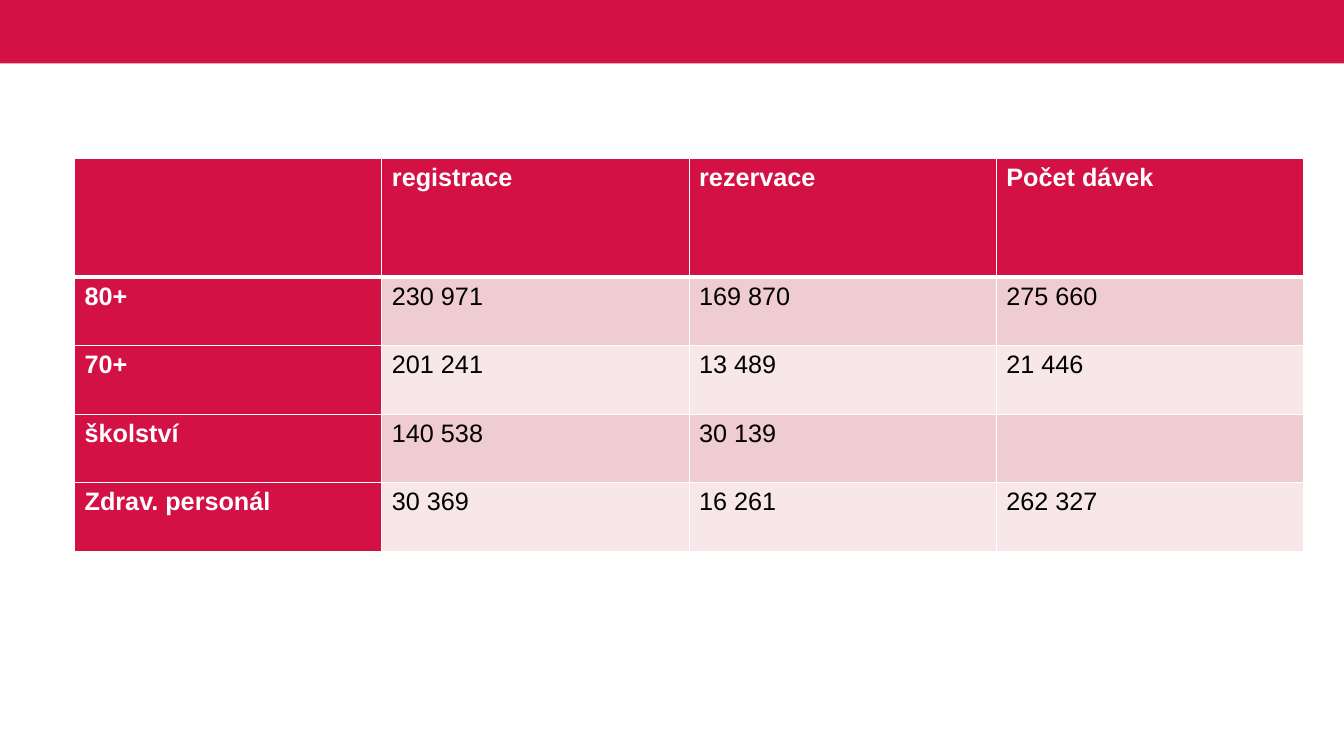
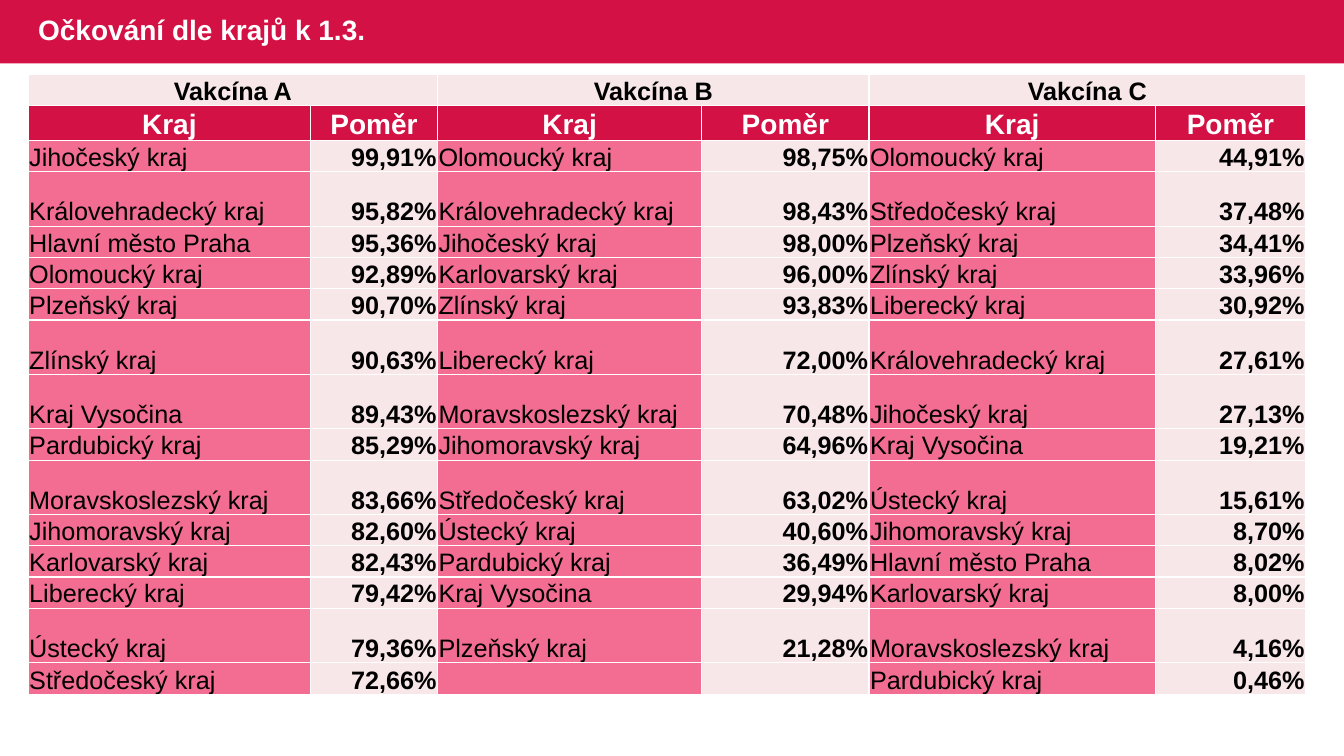
from itertools import chain, zip_longest

from lxml import etree
from pptx import Presentation
from pptx.dml.color import RGBColor
from pptx.enum import shapes, text
from pptx.oxml import ns
from pptx.util import Inches, Pt

FONT = "Arial"
RED, PINK, ROSE, PALE = "D31145", "F26D91", "EFCCCF", "F7E7E9"
WHITE, BLACK = "FFFFFF", "000000"
SLIDE_W, SLIDE_H, BAND_H = 13.33, 7.5, 0.63
LEFT, CENTER, RIGHT = text.PP_ALIGN.LEFT, text.PP_ALIGN.CENTER, text.PP_ALIGN.RIGHT
TOP, MIDDLE, BOTTOM = (text.MSO_ANCHOR.TOP, text.MSO_ANCHOR.MIDDLE,
                       text.MSO_ANCHOR.BOTTOM)

GROUPS = [
    ["", "registrace", "rezervace", "Počet dávek"],
    ["80+", "230 971", "169 870", "275 660"],
    ["70+", "201 241", "13 489", "21 446"],
    ["školství", "140 538", "30 139", ""],
    ["Zdrav. personál", "30 369", "16 261", "262 327"],
]

VACCINES = {
    "Vakcína A": [
        ("Jihočeský kraj", "99,91%"), ("Královehradecký kraj", "95,82%"),
        ("Hlavní město Praha", "95,36%"), ("Olomoucký kraj", "92,89%"),
        ("Plzeňský kraj", "90,70%"), ("Zlínský kraj", "90,63%"),
        ("Kraj Vysočina", "89,43%"), ("Pardubický kraj", "85,29%"),
        ("Moravskoslezský kraj", "83,66%"), ("Jihomoravský kraj", "82,60%"),
        ("Karlovarský kraj", "82,43%"), ("Liberecký kraj", "79,42%"),
        ("Ústecký kraj", "79,36%"), ("Středočeský kraj", "72,66%"),
    ],
    "Vakcína B": [
        ("Olomoucký kraj", "98,75%"), ("Královehradecký kraj", "98,43%"),
        ("Jihočeský kraj", "98,00%"), ("Karlovarský kraj", "96,00%"),
        ("Zlínský kraj", "93,83%"), ("Liberecký kraj", "72,00%"),
        ("Moravskoslezský kraj", "70,48%"), ("Jihomoravský kraj", "64,96%"),
        ("Středočeský kraj", "63,02%"), ("Ústecký kraj", "40,60%"),
        ("Pardubický kraj", "36,49%"), ("Kraj Vysočina", "29,94%"),
        ("Plzeňský kraj", "21,28%"),
    ],
    "Vakcína C": [
        ("Olomoucký kraj", "44,91%"), ("Středočeský kraj", "37,48%"),
        ("Plzeňský kraj", "34,41%"), ("Zlínský kraj", "33,96%"),
        ("Liberecký kraj", "30,92%"), ("Královehradecký kraj", "27,61%"),
        ("Jihočeský kraj", "27,13%"), ("Kraj Vysočina", "19,21%"),
        ("Ústecký kraj", "15,61%"), ("Jihomoravský kraj", "8,70%"),
        ("Hlavní město Praha", "8,02%"), ("Karlovarský kraj", "8,00%"),
        ("Moravskoslezský kraj", "4,16%"), ("Pardubický kraj", "0,46%"),
    ],
}


def rgb(value):
    return RGBColor.from_string(value)


def write(tf, content, size=18, color=BLACK, bold=False, align=LEFT, spacing=None):
    p = tf.paragraphs[0]
    p.alignment = align
    p.line_spacing = spacing
    font = p.font
    if content:
        r = p.add_run()
        r.text = content
        font = r.font
    font.name, font.size, font.bold = FONT, Pt(size), bold
    font.color.rgb = rgb(color)


def set_borders(cell, top=1, bottom=1):
    """Draw white cell borders, with widths in points; call before filling."""
    tc_pr = cell._tc.get_or_add_tcPr()
    for side, width in (("L", 1), ("R", 1), ("T", top), ("B", bottom)):
        ln = etree.SubElement(tc_pr, ns.qn(f"a:ln{side}"), w=str(Pt(width)))
        fill = etree.SubElement(ln, ns.qn("a:solidFill"))
        etree.SubElement(fill, ns.qn("a:srgbClr"), val=WHITE)


def style_cell(cell, content, fill, anchor=TOP, insets=(0.1, 0.05, 0.1, 0.05),
               top=1, bottom=1, **fmt):
    set_borders(cell, top, bottom)
    cell.fill.solid()
    cell.fill.fore_color.rgb = rgb(fill)
    cell.vertical_anchor = anchor
    (cell.margin_left, cell.margin_top,
     cell.margin_right, cell.margin_bottom) = map(Inches, insets)
    write(cell.text_frame, content, **fmt)


def add_grid(s, left, top, widths, heights):
    table = s.shapes.add_table(
        len(heights), len(widths), Inches(left), Inches(top),
        Inches(sum(widths)), Inches(sum(heights))).table
    for column, width in zip(table.columns, widths):
        column.width = Inches(width)
    for row, height in zip(table.rows, heights):
        row.height = Inches(height)
    return table


def add_banded_slide(prs, title=None):
    s = prs.slides.add_slide(prs.slide_layouts[6])
    band = s.shapes.add_shape(shapes.MSO_SHAPE.RECTANGLE, 0, 0,
                              Inches(SLIDE_W), Inches(BAND_H))
    band.shadow.inherit = False
    band.fill.solid()
    band.fill.fore_color.rgb = rgb(RED)
    band.line.fill.background()
    if title:
        tf = s.shapes.add_textbox(Inches(0.28), 0, Inches(8.13),
                                  Inches(BAND_H)).text_frame
        tf.word_wrap = True
        tf.vertical_anchor = MIDDLE
        write(tf, title, size=20, color=WHITE, bold=True, spacing=0.9)
    return s


def add_groups_table(s, left, top, width):
    columns = len(GROUPS[0])
    heights = [1.18] + [0.68] * (len(GROUPS) - 1)
    table = add_grid(s, left, top, [width / columns] * columns, heights)
    for i, row in enumerate(GROUPS):
        for j, content in enumerate(row):
            heading = i == 0 or j == 0
            fill = RED if heading else ROSE if i % 2 else PALE
            style_cell(table.cell(i, j), content, fill,
                       top=3 if i == 1 else 1, bottom=3 if i == 0 else 1,
                       color=WHITE if heading else BLACK, bold=heading)


def add_regions_table(s, left, top):
    rows = [list(chain(*pairs))
            for pairs in zip_longest(*VACCINES.values(), fillvalue=("", ""))]
    tall_rows = {1, 5, 6, 8, 12}
    heights = [0.3, 0.32] + [0.54 if i in tall_rows else 0.3
                             for i in range(len(rows) - 1)] + [0.32]
    table = add_grid(s, left, top, [2.8, 1.26, 2.62, 1.66, 2.84, 1.49], heights)
    tight = dict(anchor=BOTTOM, insets=(0.01, 0.01, 0.01, 0))
    for k, vaccine in enumerate(VACCINES):
        names, ratios = 2 * k, 2 * k + 1
        table.cell(0, names).merge(table.cell(0, ratios))
        for j, content, heading in ((names, vaccine, "Kraj"), (ratios, "", "Poměr")):
            style_cell(table.cell(0, j), content, PALE, bold=True,
                       align=CENTER, **tight)
            style_cell(table.cell(1, j), heading, RED, size=20, color=WHITE,
                       bold=True, align=CENTER, **tight)
    for i, row in enumerate(rows, start=2):
        for j, content in enumerate(row):
            ratio = j % 2 == 1
            style_cell(table.cell(i, j), content, PALE if ratio else PINK,
                       bold=ratio, align=RIGHT if ratio else LEFT, **tight)


def main():
    prs = Presentation()
    prs.slide_width, prs.slide_height = Inches(SLIDE_W), Inches(SLIDE_H)
    add_groups_table(add_banded_slide(prs), 0.74, 1.57, 12.19)
    add_regions_table(add_banded_slide(prs, "Očkování dle krajů k 1.3."), 0.28, 0.74)
    prs.save("out.pptx")


if __name__ == "__main__":
    main()
